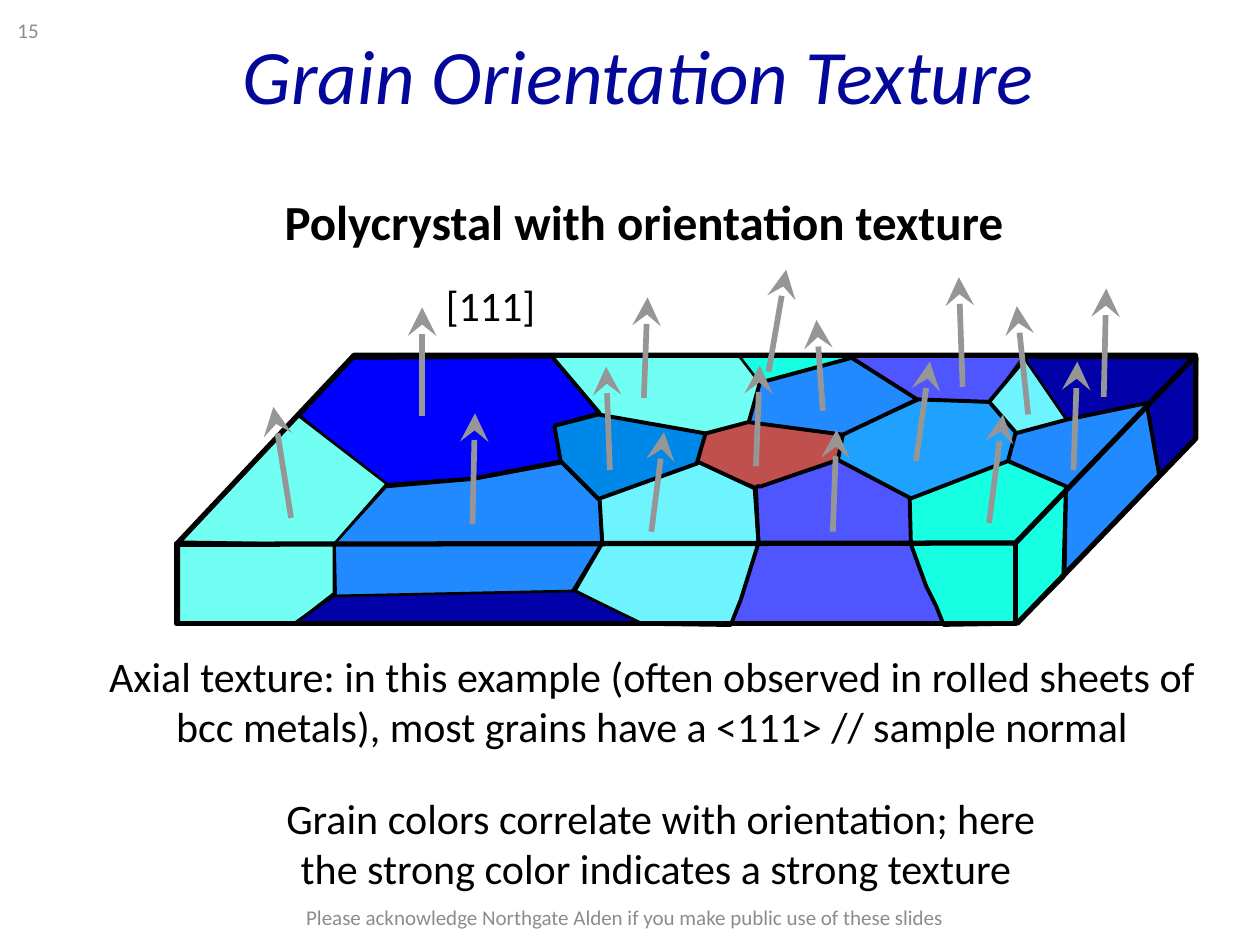
import pptx
import pptx.dml.color
import pptx.enum.shapes
import pptx.enum.text
import pptx.oxml.ns
import pptx.oxml.xmlchemy
import pptx.util
from pptx.util import Inches

ALIGN = pptx.enum.text.PP_ALIGN
ANCHOR = pptx.enum.text.MSO_ANCHOR
BLACK = "000000"
FOOTER_GREY = "8C8C8C"
ARROW_GREY = "969696"

GRAINS = [
    ("1EA1FF", BLACK, 0.75, [(6.65, 3.66), (6.69, 3.45), (7.28, 3.17), (7.87, 3.2),
                             (8.06, 3.44), (8.01, 3.67), (7.23, 3.95)]),
    ("C0504D", BLACK, 0.75, [(5.54, 3.68), (5.6, 3.45), (5.95, 3.35), (6.69, 3.45),
                             (6.65, 3.65), (6.02, 3.87)]),
    ("4F56FF", BLACK, 0.75, [(5.81, 4.95), (6.01, 4.31), (5.99, 3.88), (6.66, 3.66),
                             (7.23, 3.95), (7.24, 4.31), (7.51, 4.94)]),
    ("6DF4FF", BLACK, 2.25, [(4.56, 4.69), (4.78, 4.31), (4.75, 3.95), (5.55, 3.67), (6, 3.88),
                             (6.02, 4.31), (5.88, 4.76), (5.8, 4.96), (5.08, 4.95)]),
    ("228AFF", BLACK, 0.75, [(5.95, 3.35), (6.03, 3.04), (6.77, 2.84), (7.29, 3.18),
                             (6.69, 3.45)]),
    ("6DF4FF", None, 0, [(7.86, 3.2), (8.13, 2.84), (8.47, 3.34), (8.08, 3.43)]),
    ("4F56FF", BLACK, 0.75, [(8.13, 2.81), (6.76, 2.83), (7.28, 3.17), (7.86, 3.19)]),
    ("16FFE3", None, 0, [(6.76, 2.82), (6.03, 3.04), (5.86, 2.83)]),
    ("228AFF", BLACK, 2.25, [(2.66, 4.76), (2.65, 4.31), (3.06, 3.86), (3.76, 3.8),
                             (4.46, 3.67), (4.76, 3.97), (4.78, 4.31), (4.52, 4.74)]),
    ("71FFF4", "71FFF4", 0.75, [(3.99, 2.83), (5.88, 2.84), (6.03, 3.04), (5.94, 3.34),
                                (5.45, 3.49), (4.52, 3.32)]),
    ("0000FF", BLACK, 2.25, [(2.37, 3.3), (2.8, 2.84), (4.38, 2.83), (4.76, 3.28), (4.4, 3.38),
                             (4.46, 3.66), (3.74, 3.8), (3.05, 3.85)]),
    ("0088E8", BLACK, 2.25, [(4.45, 3.66), (4.4, 3.38), (4.75, 3.29), (5.6, 3.44),
                             (5.53, 3.68), (4.75, 3.96)]),
    ("0100A9", BLACK, 1.5, [(8.47, 3.34), (8.12, 2.83), (8.24, 2.84), (9.5, 2.84), (9.49, 3.47),
                            (9.2, 3.77), (9.1, 3.23)]),
    ("228AFF", BLACK, 2.25, [(8.06, 3.44), (8.47, 3.33), (9.1, 3.2), (9.2, 3.77), (8.45, 4.56),
                             (8.46, 3.87), (8, 3.66)]),
    ("16FFE3", BLACK, 2.25, [(7.49, 4.96), (7.43, 4.81), (7.35, 4.65), (7.23, 4.32),
                             (7.22, 3.96), (8, 3.66), (8.46, 3.86), (8.44, 4.58), (8.07, 4.95)]),
    ("71FFF4", BLACK, 1.5, [(2.65, 4.32), (3.07, 3.84), (2.37, 3.3), (1.43, 4.3)]),
    ("71FFF4", BLACK, 1.5, [(1.42, 4.95), (1.42, 4.32), (2.65, 4.32), (2.65, 4.71),
                            (2.34, 4.95)]),
    ("0100A9", BLACK, 1.5, [(2.33, 4.95), (2.65, 4.73), (4.56, 4.69), (5.1, 4.95)]),
]
SLAB_EDGES = [
    [(8.06, 4.31), (8.06, 4.95), (1.4, 4.95), (1.4, 4.3)],
    [(8.07, 4.95), (9.49, 3.48), (9.49, 2.83)],
]
SLAB_TOP = [(1.4, 4.32), (2.81, 2.82), (9.49, 2.82), (8.06, 4.31)]
BENT_BOUNDARIES = [
    [(6, 3.86), (6.04, 3.86), (6.65, 3.65), (6.69, 3.45), (5.94, 3.35), (5.6, 3.44)],
    [(6.02, 3.04), (6.76, 2.84), (7.28, 3.17), (6.69, 3.45)],
    [(8.15, 2.83), (7.85, 3.19), (7.27, 3.17)],
]
STRAIGHT_BOUNDARIES = [
    ((5.99, 3.88), (6.02, 4.3), 2.25),
    ((6.65, 3.65), (7.22, 3.95), 2.25),
    ((8.06, 3.43), (7.86, 3.2), 2.25),
    ((6.03, 3.04), (5.87, 2.83), 1.5),
    ((5.94, 3.36), (6.03, 3.04), 2.25),
]
GRAIN_NORMALS = [
    ((3.35, 3.3), (3.35, 2.44)), ((2.31, 4.11), (2.17, 3.23)),
    ((3.75, 4.16), (3.77, 3.28)), ((5.17, 4.22), (5.27, 3.43)),
    ((4.84, 3.73), (4.81, 2.91)), ((6, 3.7), (6.03, 2.9)),
    ((5.11, 3.16), (5.14, 2.36)), ((6.1, 2.95), (6.24, 2.14)),
    ((6.53, 3.26), (6.48, 2.54)), ((7.27, 3.66), (7.38, 2.87)),
    ((7.64, 3.07), (7.61, 2.2)), ((8.76, 3.15), (8.78, 2.29)),
    ((8.52, 3.73), (8.55, 2.87)), ((7.85, 4.15), (7.96, 3.29)),
    ((8.16, 3.29), (8.07, 2.43)), ((6.61, 4.22), (6.64, 3.41)),
]
CAPTIONS = [
    ("[111]", (3.44, 2.17, 0.92, 0.5), {"size": 24}, {}, {}),
    ("Axial texture: in this example (often observed in rolled sheets of bcc metals), "
     "most grains have a <111> // sample normal",
     (0.74, 5.11, 8.87, 0.91), {"size": 24}, {"word_wrap": True}, {"alignment": ALIGN.CENTER}),
    ("Polycrystal with orientation texture", (2.16, 1.47, 6.02, 0.57),
     {"size": 28, "bold": True}, {}, {}),
    ("Grain Orientation Texture", (1.83, 0.17, 6.88, 0.84),
     {"size": 44, "italic": True, "color": "03089B"}, {}, {}),
    ("Grain colors correlate with orientation; here the strong color indicates "
     "a strong texture ",
     (1.97, 6.24, 6.55, 0.91), {"size": 24}, {"word_wrap": True}, {"alignment": ALIGN.CENTER}),
    ("Please acknowledge Northgate Alden if you make public use of these slides",
     (1.81, 7.08, 6.3, 0.4), {"size": 12, "color": FOOTER_GREY},
     {"word_wrap": True, "vertical_anchor": ANCHOR.MIDDLE}, {"alignment": ALIGN.CENTER}),
    ("15", (0.04, 0.04, 0.78, 0.4), {"size": 12, "color": FOOTER_GREY},
     {"word_wrap": True, "vertical_anchor": ANCHOR.MIDDLE}, {}),
]


def rgb(code):
    return pptx.dml.color.RGBColor.from_string(code)


def apply_format(target, values):
    for name, value in values.items():
        setattr(target, name, value)


def paint_line(line, color, width):
    if color is None:
        line.fill.background()
        return
    line.color.rgb = rgb(color)
    line.width = pptx.util.Pt(width)


def add_outline(slide, points, fill, color, width, close):
    corners = [(Inches(x), Inches(y)) for x, y in points]
    builder = slide.shapes.build_freeform(*corners[0], scale=1.0)
    builder.add_line_segments(corners[1:], close=close)
    outline = builder.convert_to_shape()
    outline.shadow.inherit = False
    if fill is None:
        outline.fill.background()
    else:
        outline.fill.solid()
        outline.fill.fore_color.rgb = rgb(fill)
    paint_line(outline.line, color, width)


def add_segment(slide, start, end, color, width, arrow=False):
    segment = slide.shapes.add_connector(
        pptx.enum.shapes.MSO_CONNECTOR.STRAIGHT, *map(Inches, start + end))
    paint_line(segment.line, color, width)
    properties = segment._element.spPr
    if arrow:
        head = pptx.oxml.xmlchemy.OxmlElement("a:tailEnd")
        for name, value in {"type": "stealth", "w": "lg", "len": "lg"}.items():
            head.set(name, value)
        properties.find(pptx.oxml.ns.qn("a:ln")).append(head)
    properties.append(pptx.oxml.xmlchemy.OxmlElement("a:effectLst"))


def add_caption(slide, text, place, font, frame, paragraph):
    caption = slide.shapes.add_textbox(*map(Inches, place)).text_frame
    apply_format(caption, {"word_wrap": False, **frame})
    line = caption.paragraphs[0]
    apply_format(line, {"alignment": ALIGN.LEFT, **paragraph})
    run = line.add_run()
    run.text = text
    style = {"name": "Calibri", **font, "size": pptx.util.Pt(font["size"])}
    run.font.color.rgb = rgb(style.pop("color", BLACK))
    apply_format(run.font, style)


def main():
    deck = pptx.Presentation()
    deck.slide_width, deck.slide_height = Inches(10), Inches(7.5)
    slide = deck.slides.add_slide(deck.slide_layouts[6])
    for fill, color, width, points in GRAINS:
        add_outline(slide, points, fill, color, width, True)
    for points in SLAB_EDGES:
        add_outline(slide, points, None, BLACK, 3, False)
    for points in BENT_BOUNDARIES:
        add_outline(slide, points, None, BLACK, 2.25, False)
    for start, end, width in STRAIGHT_BOUNDARIES:
        add_segment(slide, start, end, BLACK, width)
    add_outline(slide, SLAB_TOP, None, BLACK, 3, True)
    for start, end in GRAIN_NORMALS:
        add_segment(slide, start, end, ARROW_GREY, 3.25, arrow=True)
    for caption in CAPTIONS:
        add_caption(slide, *caption)
    deck.save("out.pptx")


if __name__ == "__main__":
    main()
